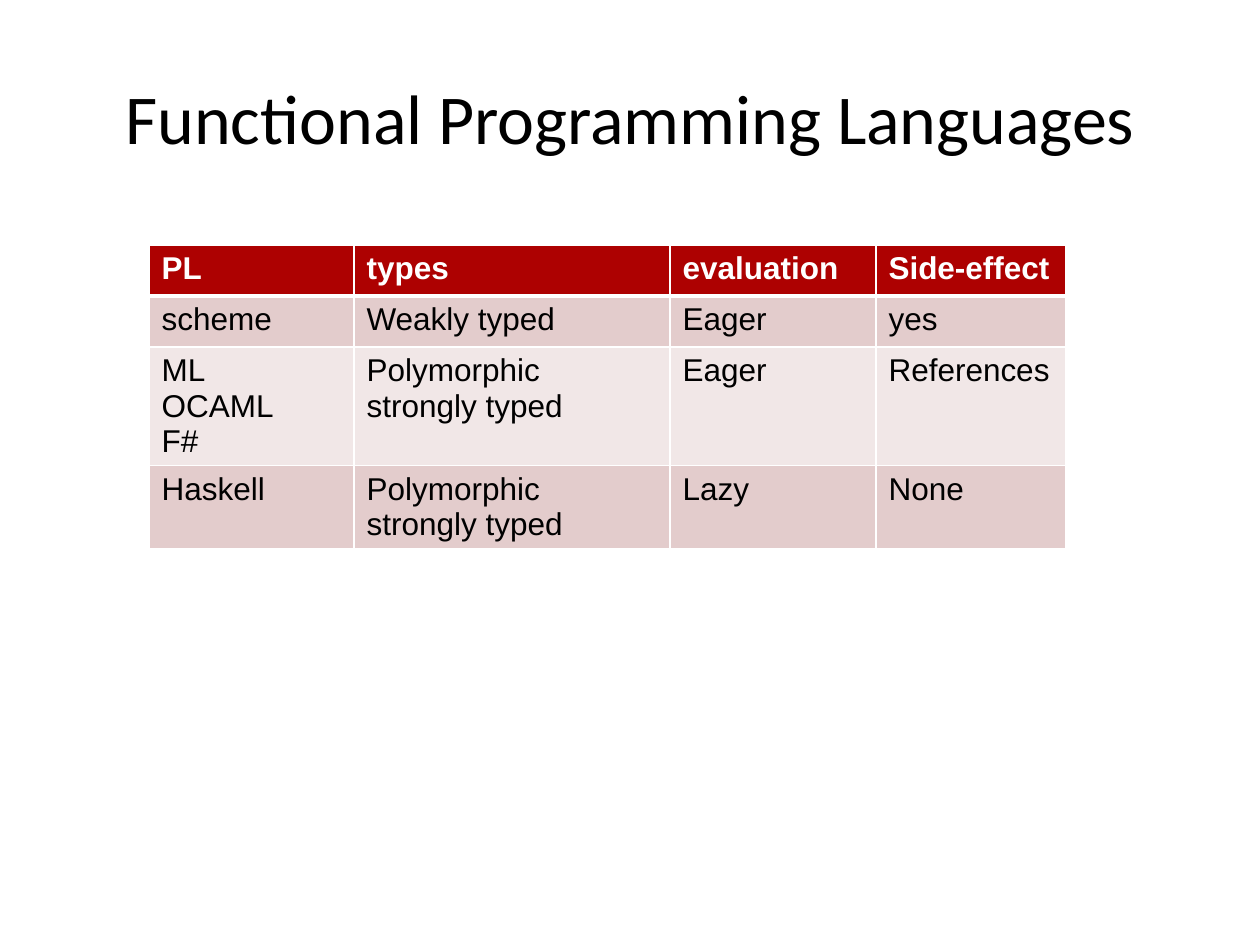
import dataclasses

import lxml.etree
import pptx
import pptx.dml.color
import pptx.enum.text
import pptx.oxml.ns
import pptx.util

EMU_PER_PX = 914400 / 126


@dataclasses.dataclass(frozen=True)
class Theme:
    title_font: str = "Calibri"
    body_font: str = "Arial"
    title_size: int = 40
    body_size: int = 18
    text: str = "000000"
    header_text: str = "FFFFFF"
    header_fill: str = "AD0101"
    band_fills: tuple = ("E3CCCC", "F1E7E7")
    border: str = "FFFFFF"
    border_width: int = 1
    header_rule_width: int = 3


THEME = Theme()

LANGUAGE_ROWS = [
    ["PL", "types", "evaluation", "Side-effect"],
    ["scheme", "Weakly typed", "Eager", "yes"],
    ["ML\nOCAML\nF#", "Polymorphic \vstrongly typed", "Eager", "References"],
    ["Haskell", "Polymorphic \vstrongly typed", "Lazy", "None"],
]
COLUMN_SHARES = [205, 316, 206, 190]
ROW_HEIGHT = 51


def px(length):
    return pptx.util.Emu(round(length * EMU_PER_PX))


def format_runs(text_frame, font_name, size, color, bold=False):
    for paragraph in text_frame.paragraphs:
        for run in paragraph.runs:
            run.font.name = font_name
            run.font.size = pptx.util.Pt(size)
            run.font.bold = bold
            run.font.color.rgb = pptx.dml.color.RGBColor.from_string(color)


def set_borders(cell, bottom_width, top_width):
    properties = cell._tc.get_or_add_tcPr()
    widths = {
        "lnL": THEME.border_width,
        "lnR": THEME.border_width,
        "lnT": top_width,
        "lnB": bottom_width,
    }
    for position, (side, width) in enumerate(widths.items()):
        line = lxml.etree.Element(
            pptx.oxml.ns.qn(f"a:{side}"), w=str(pptx.util.Pt(width))
        )
        fill = lxml.etree.SubElement(line, pptx.oxml.ns.qn("a:solidFill"))
        lxml.etree.SubElement(fill, pptx.oxml.ns.qn("a:srgbClr"), val=THEME.border)
        properties.insert(position, line)


def place_title(slide, text, left, top, width, height):
    title = slide.shapes.title
    title.left, title.top = px(left), px(top)
    title.width, title.height = px(width), px(height)
    text_frame = title.text_frame
    text_frame.text = text
    text_frame.word_wrap = True
    text_frame.vertical_anchor = pptx.enum.text.MSO_ANCHOR.MIDDLE
    text_frame.paragraphs[0].alignment = pptx.enum.text.PP_ALIGN.CENTER
    format_runs(text_frame, THEME.title_font, THEME.title_size, THEME.text)


def fill_cell(cell, text, row_index):
    is_header = row_index == 0
    fill = THEME.header_fill if is_header else THEME.band_fills[(row_index - 1) % 2]
    cell.text_frame.text = text
    format_runs(
        cell.text_frame,
        THEME.body_font,
        THEME.body_size,
        THEME.header_text if is_header else THEME.text,
        is_header,
    )
    cell.fill.solid()
    cell.fill.fore_color.rgb = pptx.dml.color.RGBColor.from_string(fill)
    set_borders(
        cell,
        bottom_width=THEME.header_rule_width if is_header else THEME.border_width,
        top_width=THEME.header_rule_width if row_index == 1 else THEME.border_width,
    )


def place_language_table(slide, rows, left, top, width):
    table = slide.shapes.add_table(
        len(rows), len(rows[0]),
        px(left), px(top), px(width), px(ROW_HEIGHT * len(rows)),
    ).table
    for column, share in zip(table.columns, COLUMN_SHARES):
        column.width = px(width * share / sum(COLUMN_SHARES))
    for row_index, texts in enumerate(rows):
        table.rows[row_index].height = px(ROW_HEIGHT)
        for column_index, text in enumerate(texts):
            fill_cell(table.cell(row_index, column_index), text, row_index)


def main():
    presentation = pptx.Presentation()
    presentation.slide_width = px(1260)
    presentation.slide_height = px(945)
    slide = presentation.slides.add_slide(presentation.slide_layouts[5])
    place_title(slide, "Functional Programming Languages", 63, 38, 1134, 158)
    place_language_table(slide, LANGUAGE_ROWS, 149, 245, 917)
    presentation.save("out.pptx")


if __name__ == "__main__":
    main()
